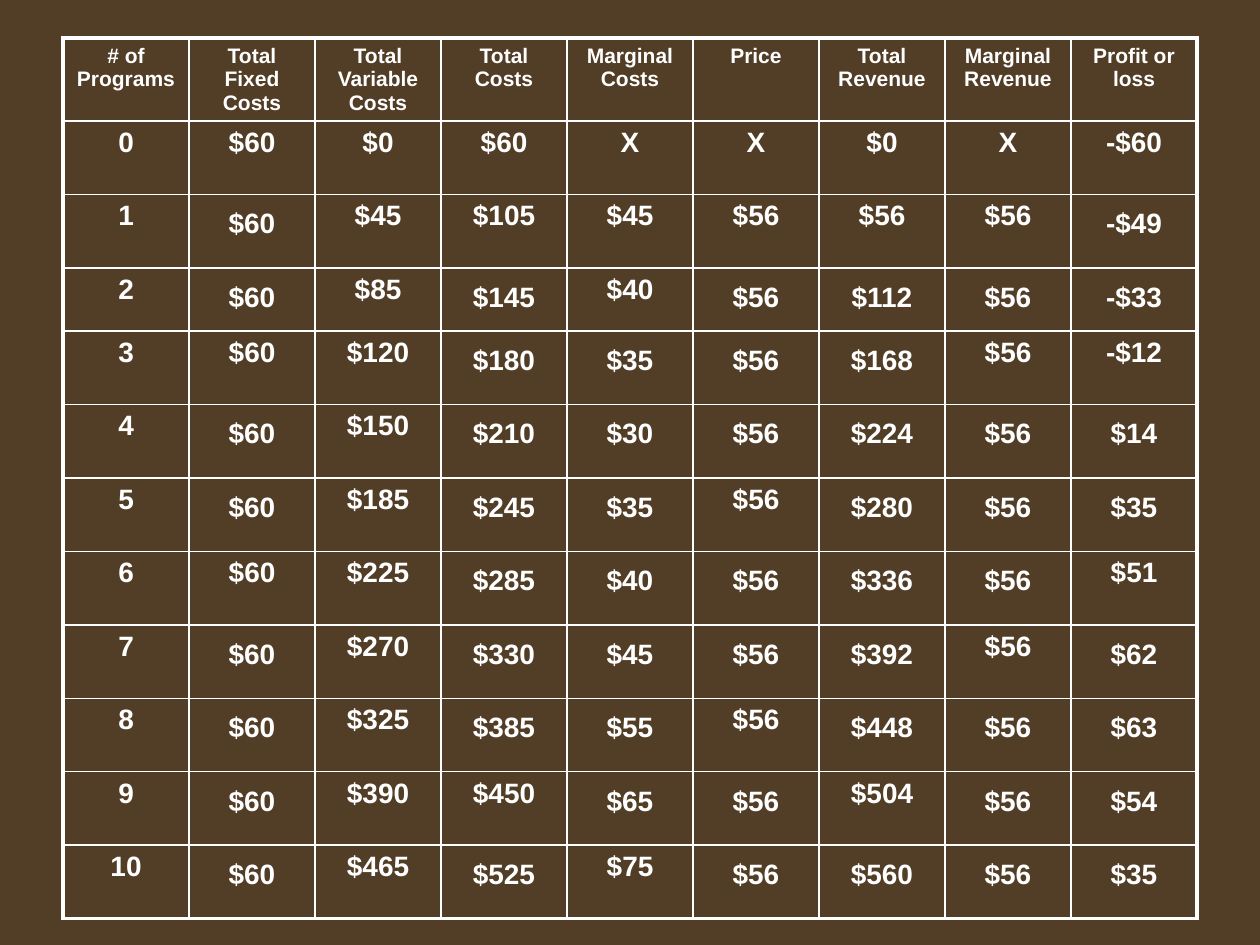
"""Build a slide tabulating costs, revenue and profit by number of programs."""
from dataclasses import dataclass

from lxml import etree
from pptx import Presentation
from pptx import util as u
from pptx.dml.color import RGBColor
from pptx.enum import text
from pptx.oxml.ns import qn


@dataclass(frozen=True)
class Theme:
    background: str = "523E26"
    ink: str = "FFFFFF"
    font: str = "Arial"
    header_size: int = 12
    value_size: int = 16
    grid_line: float = 1
    outer_line: float = 2.25


theme = Theme()
FLOATING = "~"
HEADERS = ["# of Programs", "Total Fixed Costs", "Total Variable Costs",
           "Total Costs", "Marginal Costs", "Price", "Total Revenue",
           "Marginal Revenue", "Profit or loss"]
VALUES = """
0 $60 $0 $60 X X $0 X -$60
1 ~$60 $45 $105 $45 $56 $56 $56 ~-$49
2 ~$60 $85 ~$145 $40 ~$56 ~$112 ~$56 ~-$33
3 $60 $120 ~$180 ~$35 ~$56 ~$168 $56 -$12
4 ~$60 $150 ~$210 ~$30 ~$56 ~$224 ~$56 ~$14
5 ~$60 $185 ~$245 ~$35 $56 ~$280 ~$56 ~$35
6 $60 $225 ~$285 ~$40 ~$56 ~$336 ~$56 $51
7 ~$60 $270 ~$330 ~$45 ~$56 ~$392 $56 ~$62
8 ~$60 $325 ~$385 ~$55 $56 ~$448 ~$56 ~$63
9 ~$60 $390 $450 ~$65 ~$56 $504 ~$56 ~$54
10 ~$60 $465 ~$525 $75 ~$56 ~$560 ~$56 ~$35
"""
rows = [HEADERS] + [line.split() for line in VALUES.strip().splitlines()]
row_count, column_count = len(rows), len(HEADERS)


def write(frame, words, size):
    para = frame.paragraphs[0]
    para.text = words
    para.alignment = text.PP_ALIGN.CENTER
    para.font.name = theme.font
    para.font.size = u.Pt(size)
    para.font.bold = True
    para.font.color.rgb = RGBColor.from_string(theme.ink)


def add_border(cell, side, width):
    line = etree.SubElement(cell._tc.get_or_add_tcPr(), qn(f"a:ln{side}"),
                            w=str(u.Pt(width)))
    fill = etree.SubElement(line, qn("a:solidFill"))
    etree.SubElement(fill, qn("a:srgbClr"), val=theme.ink)


deck = Presentation()
deck.slide_width, deck.slide_height = u.Inches(10), u.Inches(7.5)
page = deck.slides.add_slide(deck.slide_layouts[6])
page.background.fill.solid()
page.background.fill.fore_color.rgb = RGBColor.from_string(theme.background)

left, column_width = u.Inches(0.5), u.Inches(1)
heights = [u.Inches(7 / 12)] * row_count
heights[3] = u.Inches(0.5)
table = page.shapes.add_table(row_count, column_count, left, u.Inches(0.3),
                              column_width * column_count, sum(heights)).table
table.first_row = table.horz_banding = False
for column in table.columns:
    column.width = column_width

top = u.Inches(1) - heights[0]
for r, values in enumerate(rows):
    table.rows[r].height = heights[r]
    size = theme.value_size if r else theme.header_size
    for c, value in enumerate(values):
        cell = table.cell(r, c)
        outer_sides = {"L": c == 0, "R": c == column_count - 1,
                       "T": r == 0, "B": r == row_count - 1}
        for side, outer in outer_sides.items():
            add_border(cell, side, theme.outer_line if outer else theme.grid_line)
        cell.fill.background()
        if value.startswith(FLOATING):
            box = page.shapes.add_textbox(left + c * column_width, top,
                                          column_width, u.Inches(0.37))
            box.text_frame.word_wrap = True
            box.text_frame.vertical_anchor = text.MSO_ANCHOR.MIDDLE
            write(box.text_frame, value.removeprefix(FLOATING), size)
        else:
            write(cell.text_frame, value, size)
    top += heights[r]

deck.save("out.pptx")
